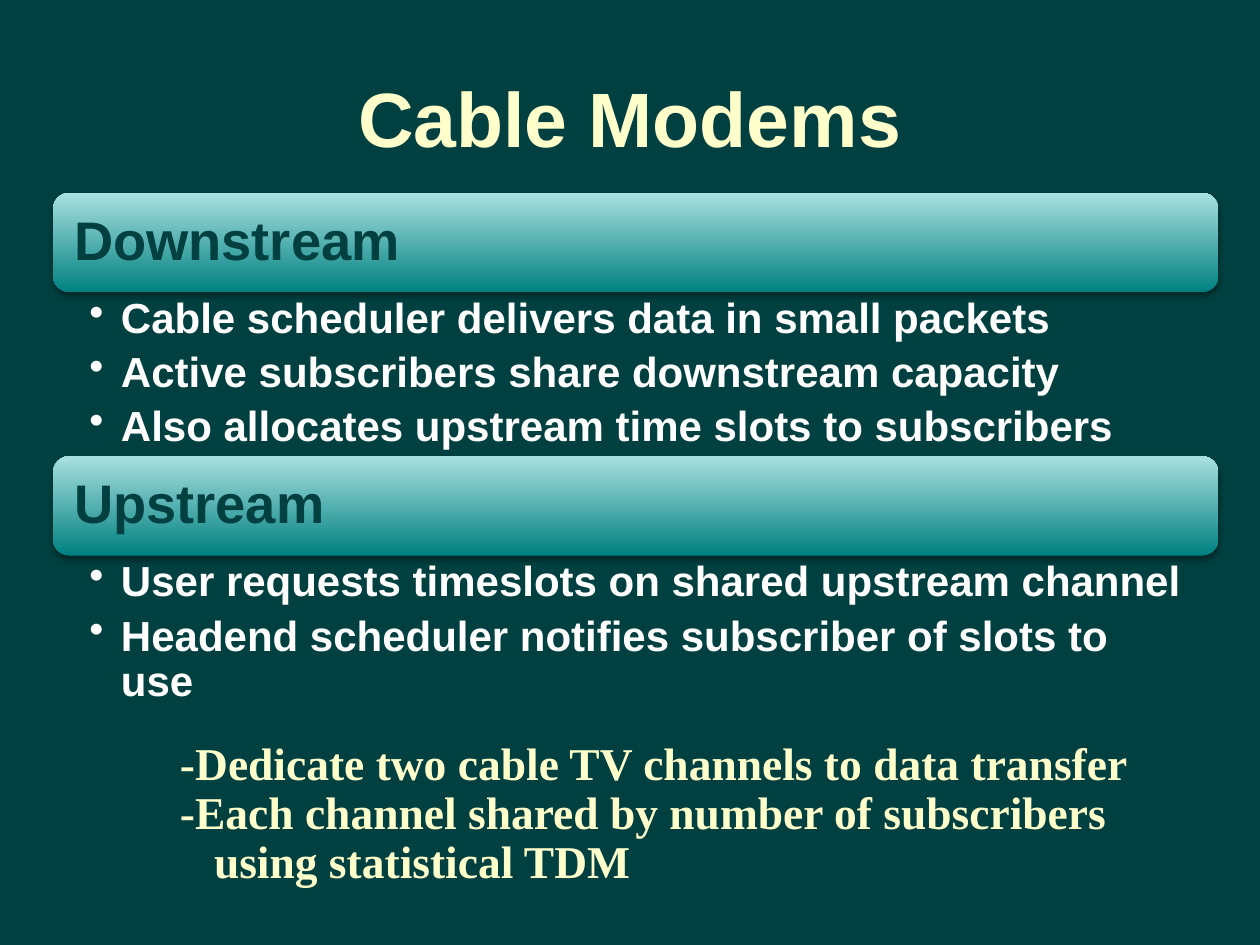
from lxml import etree
from pptx import Presentation
from pptx.dml.color import RGBColor
from pptx.enum.shapes import MSO_SHAPE
from pptx.enum.text import MSO_ANCHOR, PP_ALIGN
from pptx.oxml import parse_xml
from pptx.oxml.ns import nsdecls, qn
from pptx.util import Inches, Pt

DARK, TEAL, MINT = "004040", "008080", "A9E0E0"
CREAM, WHITE = "FFFFCC", "FFFFFF"


def rgb(value):
    return RGBColor.from_string(value)


def add_text(slide, box, lines, size, color, font="Arial", spacing=0.9,
             after=0, anchor=MSO_ANCHOR.TOP, insets=(0.1, 0.05, 0.1, 0.05)):
    """Place bold paragraphs in a box and return them."""
    tf = slide.shapes.add_textbox(*map(Inches, box)).text_frame
    tf.word_wrap = True
    tf.vertical_anchor = anchor
    (tf.margin_left, tf.margin_top,
     tf.margin_right, tf.margin_bottom) = map(Inches, insets)
    for i, line in enumerate(lines):
        p = tf.paragraphs[0] if i == 0 else tf.add_paragraph()
        p.text = line
        p.line_spacing = spacing
        p.space_after = Pt(after)
        f = p.runs[0].font
        f.name, f.size, f.bold = font, Pt(size), True
        f.color.rgb = rgb(color)
    return tf.paragraphs


def set_indent(p, left, first=0):
    pPr = p._p.get_or_add_pPr()
    pPr.set("marL", str(Inches(left)))
    pPr.set("indent", str(Inches(first)))
    return pPr


def add_title(slide, box, text):
    p, = add_text(slide, box, [text], 44, CREAM, spacing=1.0,
                  anchor=MSO_ANCHOR.MIDDLE)
    p.alignment = PP_ALIGN.CENTER


def add_banner(slide, box, text):
    """Gradient bar with a soft shadow and its heading."""
    sp = slide.shapes.add_shape(MSO_SHAPE.ROUNDED_RECTANGLE, *map(Inches, box))
    sp.line.fill.background()
    sp.fill.gradient()
    sp.fill.gradient_angle = 90
    for stop, color, position in zip(sp.fill.gradient_stops, (TEAL, MINT), (0, 1)):
        stop.color.rgb = rgb(color)
        stop.position = position
    sp._element.spPr.append(parse_xml(
        f'<a:effectLst {nsdecls("a")}><a:outerShdw blurRad="{Pt(3.1)}" '
        f'dist="{Pt(1.8)}" dir="5400000" rotWithShape="0"><a:srgbClr val="000000">'
        '<a:alpha val="35000"/></a:srgbClr></a:outerShdw></a:effectLst>'))
    left, top, width, height = box
    pad = 0.04
    add_text(slide, (left + pad, top + pad, width - 2 * pad, height - 2 * pad),
             [text], 31, DARK, anchor=MSO_ANCHOR.MIDDLE, insets=(0.13,) * 4)


def add_section(slide, box, heading, items):
    """Banner on top, bullet list in the rest of the box."""
    left, top, width, height = box
    bar = 0.79
    add_banner(slide, (left, top, width, bar), heading)
    for p in add_text(slide, (left, top + bar, width, height - bar), items, 24,
                      WHITE, after=5, insets=(0.29, 0.04, 0.24, 0.04)):
        pPr = set_indent(p, 0.25, -0.25)
        etree.SubElement(pPr, qn("a:buChar")).set("char", "•")


def add_summary(slide, box, lines):
    paragraphs = add_text(slide, box, lines, 26, CREAM, font="Times New Roman")
    set_indent(paragraphs[-1], 0.27)  # continuation of the line above


def main():
    prs = Presentation()
    prs.slide_width, prs.slide_height = Inches(10), Inches(7.5)
    s = prs.slides.add_slide(prs.slide_layouts[6])
    s.background.fill.solid()
    s.background.fill.fore_color.rgb = rgb(DARK)

    add_title(s, (0.5, 0.3, 9, 1.25), "Cable Modems")
    add_section(s, (0.42, 1.53, 9.25, 2.09), "Downstream", [
        "Cable scheduler delivers data in small packets",
        "Active subscribers share downstream capacity",
        "Also allocates upstream time slots to subscribers"])
    add_section(s, (0.42, 3.62, 9.25, 2.02), "Upstream", [
        "User requests timeslots on shared upstream channel",
        "Headend scheduler notifies subscriber of slots to use"])
    add_summary(s, (1.33, 5.83, 7.75, 1.69), [
        "-Dedicate two cable TV channels to data transfer",
        "-Each channel shared by number of subscribers",
        "using statistical TDM"])
    prs.save("out.pptx")


if __name__ == "__main__":
    main()
